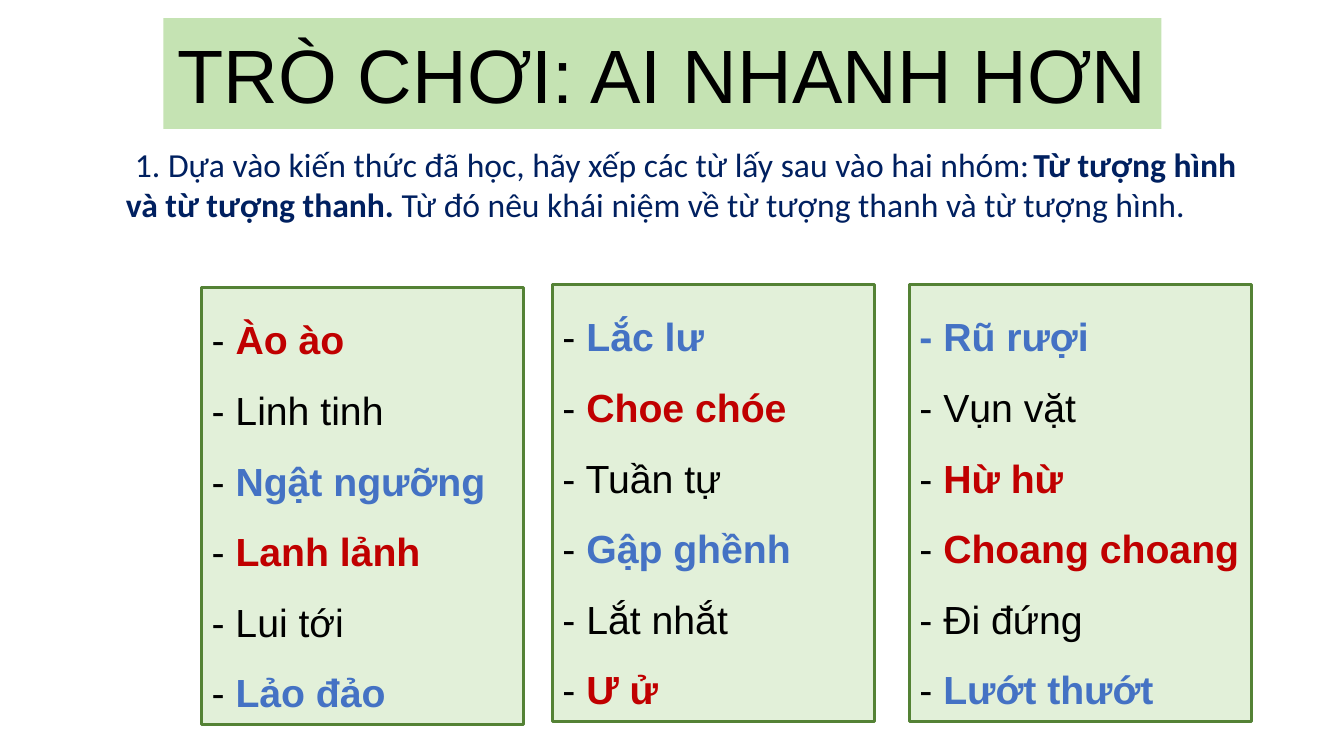
from pptx import Presentation
from pptx.dml.color import RGBColor
from pptx.enum import shapes, text
from pptx.oxml import parse_xml
from pptx.oxml.ns import nsdecls
from pptx.util import Inches, Pt

# Content: each line is a list of (words, style) runs
TITLE = "TRÒ CHƠI: AI NHANH HƠN"
TASK = [
    ("1. Dựa vào kiến thức đã học, hãy xếp các từ lấy sau vào hai nhóm:\t", "task"),
    ("Từ tượng hình và từ tượng thanh. ", "task_key"),
    ("Từ đó nêu khái niệm về từ tượng thanh và từ tượng hình.", "task"),
]
DASH = ("- ", "word")
WORD_COLUMNS = [
    dict(box=(2, 2.85, 3.19, 4.34), align=text.PP_ALIGN.JUSTIFY, lines=[
        [DASH, ("Ào ào", "sound")],
        [("- Linh tinh", "word")],
        [DASH, ("Ngật ngưỡng", "image")],
        [DASH, ("Lanh lảnh", "sound")],
        [("- Lui tới", "word")],
        [DASH, ("Lảo đảo", "image")],
    ]),
    dict(box=(5.48, 2.82, 3.19, 4.34), align=text.PP_ALIGN.LEFT, lines=[
        [DASH, ("Lắc lư", "image")],
        [DASH, ("Choe chóe", "sound")],
        [("- Tuần tự", "word")],
        [DASH, ("Gập ghềnh", "image")],
        [("- Lắt nhắt", "word")],
        [DASH, ("Ư ử", "sound")],
    ]),
    dict(box=(9.02, 2.82, 3.39, 4.34), align=text.PP_ALIGN.LEFT, lines=[
        [("- Rũ rượi", "image")],
        [("- Vụn vặt", "word")],
        [DASH, ("Hừ hừ", "sound")],
        [DASH, ("Choang choang", "sound")],
        [("- Đi đứng", "word")],
        [DASH, ("Lướt thướt", "image")],
    ]),
]

# Theme: run styles are (font, size, colour, bold)
THEME = dict(
    banner="C5E3B3", panel="E2F0D9", border="548235", border_width=2.25,
    styles=dict(
        title=("Arial", 54, "000000", False),
        task=("Calibri", 24, "002060", False),
        task_key=("Calibri", 24, "002060", True),
        word=("Arial", 28, "000000", False),
        sound=("Arial", 28, "C00000", True),
        image=("Arial", 28, "4472C4", True),
    ),
)


def inches(box):
    return [Inches(value) for value in box]


def paint(fill, colour):
    fill.solid()
    fill.fore_color.rgb = RGBColor.from_string(colour)


def write(frame, lines, align=text.PP_ALIGN.LEFT, anchor=text.MSO_ANCHOR.TOP,
          spacing=1.0, wrap=True, first_indent=0, tab=None):
    frame.word_wrap = wrap
    frame.auto_size = text.MSO_AUTO_SIZE.NONE
    frame.vertical_anchor = anchor
    for index, runs in enumerate(lines):
        paragraph = frame.add_paragraph() if index else frame.paragraphs[0]
        paragraph.alignment = align
        paragraph.line_spacing = spacing
        if tab:
            properties = paragraph._p.get_or_add_pPr()
            properties.set("marL", "0")
            properties.set("indent", str(Inches(first_indent)))
            properties.append(parse_xml(
                f'<a:tabLst {nsdecls("a")}><a:tab pos="{Inches(tab)}" algn="l"/></a:tabLst>'))
        for words, style in runs:
            run = paragraph.add_run()
            run.text = words
            font = run.font
            font.name, size, colour, font.bold = THEME["styles"][style]
            font.size = Pt(size)
            font.color.rgb = RGBColor.from_string(colour)


def main():
    deck = Presentation()
    deck.slide_width, deck.slide_height = inches((13.33, 7.5))
    slide = deck.slides.add_slide(deck.slide_layouts[5])

    # Title banner
    title = slide.shapes.title
    title.left, title.top, title.width, title.height = inches((1.62, 0.18, 9.9, 1.1))
    paint(title.fill, THEME["banner"])
    write(title.text_frame, [[(TITLE, "title")]], align=text.PP_ALIGN.CENTER,
          anchor=text.MSO_ANCHOR.MIDDLE, wrap=False)

    # Word panels
    for column in WORD_COLUMNS:
        panel = slide.shapes.add_shape(shapes.MSO_SHAPE.RECTANGLE, *inches(column["box"]))
        panel.shadow.inherit = False
        paint(panel.fill, THEME["panel"])
        paint(panel.line.fill, THEME["border"])
        panel.line.width = Pt(THEME["border_width"])
        write(panel.text_frame, column["lines"], align=column["align"], spacing=1.5)

    # Task, with a tab before the two group names
    task = slide.shapes.add_textbox(*inches((1.15, 1.38, 11.45, 1.31)))
    write(task.text_frame, [TASK], first_indent=0.09, tab=9.78)

    deck.save("out.pptx")


if __name__ == "__main__":
    main()
